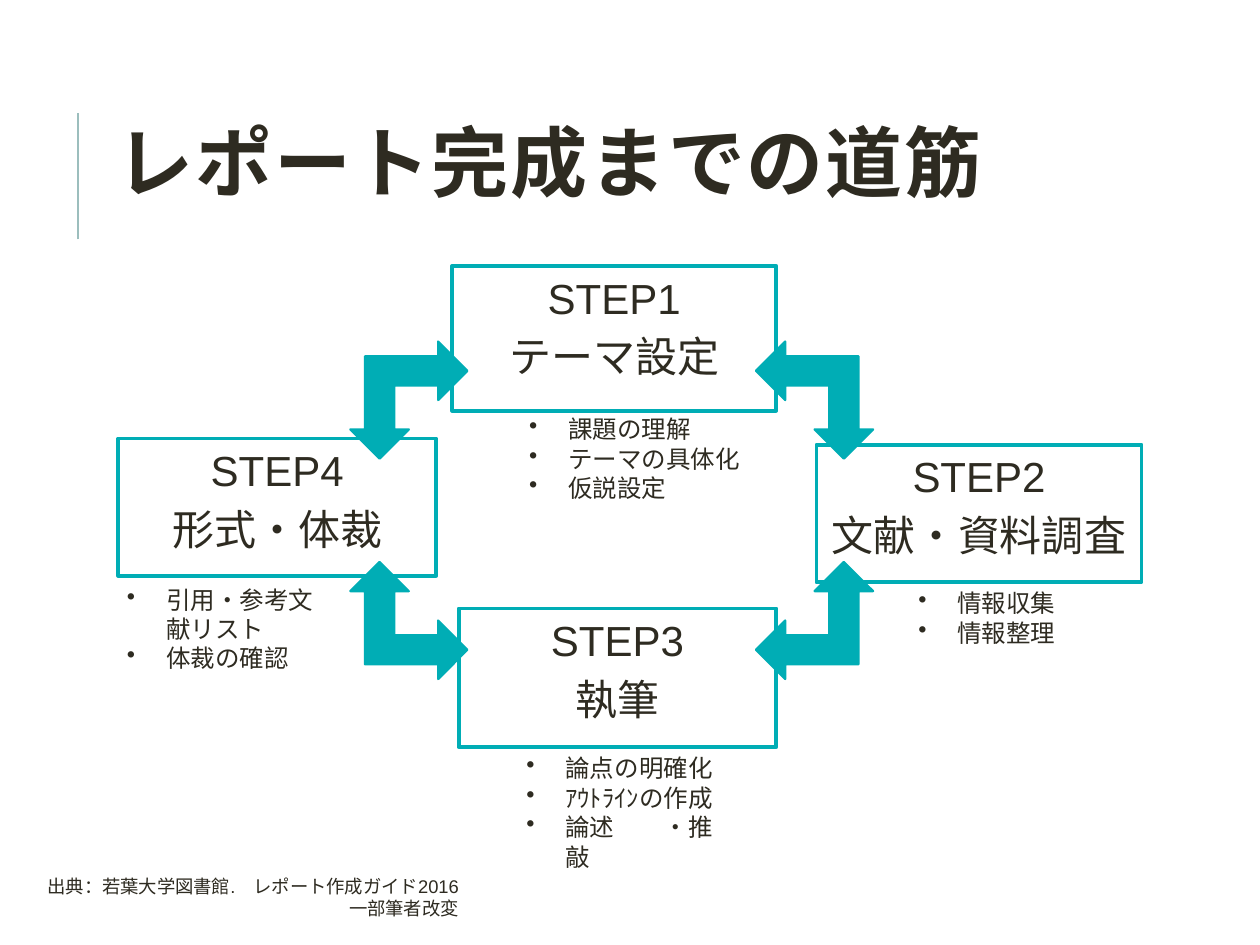
from lxml import etree
from pptx import Presentation
from pptx.dml.color import RGBColor
from pptx.enum.shapes import MSO_CONNECTOR, MSO_SHAPE
from pptx.enum.text import MSO_ANCHOR, MSO_AUTO_SIZE, PP_ALIGN
from pptx.oxml.ns import qn
from pptx.util import Emu, Pt

PX = 9144  # EMU per px, 100 px to the inch
FONT = "Arial"
COLORS = {"text": "2E2B21", "teal": "00ADB5", "rule": "9CBEBD", "white": "FFFFFF"}
RECTANGLE = MSO_SHAPE.RECTANGLE
CORNER_ARROW = MSO_SHAPE.LEFT_UP_ARROW
STRAIGHT = MSO_CONNECTOR.STRAIGHT
TOP, MIDDLE = MSO_ANCHOR.TOP, MSO_ANCHOR.MIDDLE
FIT_SHAPE = MSO_AUTO_SIZE.SHAPE_TO_FIT_TEXT
LEFT, CENTER, RIGHT = PP_ALIGN.LEFT, PP_ALIGN.CENTER, PP_ALIGN.RIGHT

# Each step: box, heading, name, note box, notes
STEPS = [
    ((359, 211, 257, 115), "STEP1", "テーマ設定",
     (410, 324, 188, 81), ["課題の理解", "テーマの具体化", "仮説設定"]),
    ((648, 353, 258, 109), "STEP2", "文献・資料調査",
     (719, 462, 139, 57), ["情報収集", "情報整理"]),
    ((364, 483, 252, 110), "STEP3", "執筆",
     (408, 593, 183, 81), ["論点の明確化", "ｱｳﾄﾗｲﾝの作成", "論述　　・推敲"]),
    ((94, 348, 252, 109), "STEP4", "形式・体裁",
     (91, 459, 187, 81), ["引用・参考文献リスト", "体裁の確認"]),
]
ARROW_SIZE = 93
ARROWS = [(600, 271, 270), (600, 446, 0), (278, 446, 90), (278, 271, 180)]


def color(name):
    return RGBColor.from_string(COLORS[name])


def lengths(*values):
    return [Emu(value * PX) for value in values]


class SlideBuilder:
    def __init__(self, slide):
        self.shapes = slide.shapes

    def set_lines(self, frame, lines, size, align=LEFT, space_before=0):
        frame.word_wrap = True
        for index, line in enumerate(lines):
            paragraph = frame.add_paragraph() if index else frame.paragraphs[0]
            paragraph.text = line
            paragraph.alignment = align
            paragraph.space_before = Pt(space_before)
            paragraph.font.name = FONT
            paragraph.font.size = Pt(size)
            paragraph.font.color.rgb = color("text")
        return frame.paragraphs

    def text(self, box, lines, size, align=LEFT):
        frame = self.shapes.add_textbox(*lengths(*box)).text_frame
        frame.auto_size = FIT_SHAPE
        return self.set_lines(frame, lines, size, align)

    def title(self, box, line):
        frame = self.shapes.add_textbox(*lengths(*box)).text_frame
        frame.vertical_anchor = MIDDLE
        paragraph = self.set_lines(frame, [line], 44)[0]
        paragraph.line_spacing = 0.8
        paragraph.font.bold = True
        paragraph.runs[0]._r.get_or_add_rPr().set("spc", "100")

    def bullets(self, box, lines):
        indent = 31 * PX
        for paragraph in self.text(box, lines, 14):
            properties = paragraph._p.get_or_add_pPr()
            properties.set("marL", str(indent))
            properties.set("indent", str(-indent))
            bullet = etree.Element(qn("a:buChar"), char="•")
            properties.find(qn("a:spcBef")).addnext(bullet)

    def shape(self, kind, box, fill, line_width):
        shape = self.shapes.add_shape(kind, *lengths(*box))
        shape.shadow.inherit = False
        shape.fill.solid()
        shape.fill.fore_color.rgb = color(fill)
        shape.line.color.rgb = color("teal")
        shape.line.width = Pt(line_width)
        return shape

    def step(self, box, lines):
        frame = self.shape(RECTANGLE, box, "white", 2.25).text_frame
        frame.vertical_anchor = TOP
        self.set_lines(frame, lines, 24, CENTER, space_before=4.8)

    def arrow(self, left, top, rotation):
        box = (left, top, ARROW_SIZE, ARROW_SIZE)
        self.shape(CORNER_ARROW, box, "teal", 1.25).rotation = rotation

    def rule(self, *ends):
        connector = self.shapes.add_connector(STRAIGHT, *lengths(*ends))
        connector.line.color.rgb = color("rule")
        connector.line.width = Pt(1.5)
        etree.SubElement(connector._element.spPr, qn("a:effectLst"))


def main():
    presentation = Presentation()
    presentation.slide_width, presentation.slide_height = lengths(1000, 750)
    builder = SlideBuilder(presentation.slides.add_slide(presentation.slide_layouts[6]))

    builder.rule(62, 190, 62, 90)
    builder.title((83, 72, 757, 125), "レポート完成までの道筋")
    for box, heading, name, note_box, notes in STEPS:
        builder.step(box, [heading, name])
        builder.bullets(note_box, notes)
    for arrow in ARROWS:
        builder.arrow(*arrow)
    builder.text((14, 690, 360, 45),
                 ["出典：若葉大学図書館.　レポート作成ガイド2016", "一部筆者改変"],
                 10.5, RIGHT)
    presentation.save("out.pptx")


if __name__ == "__main__":
    main()
